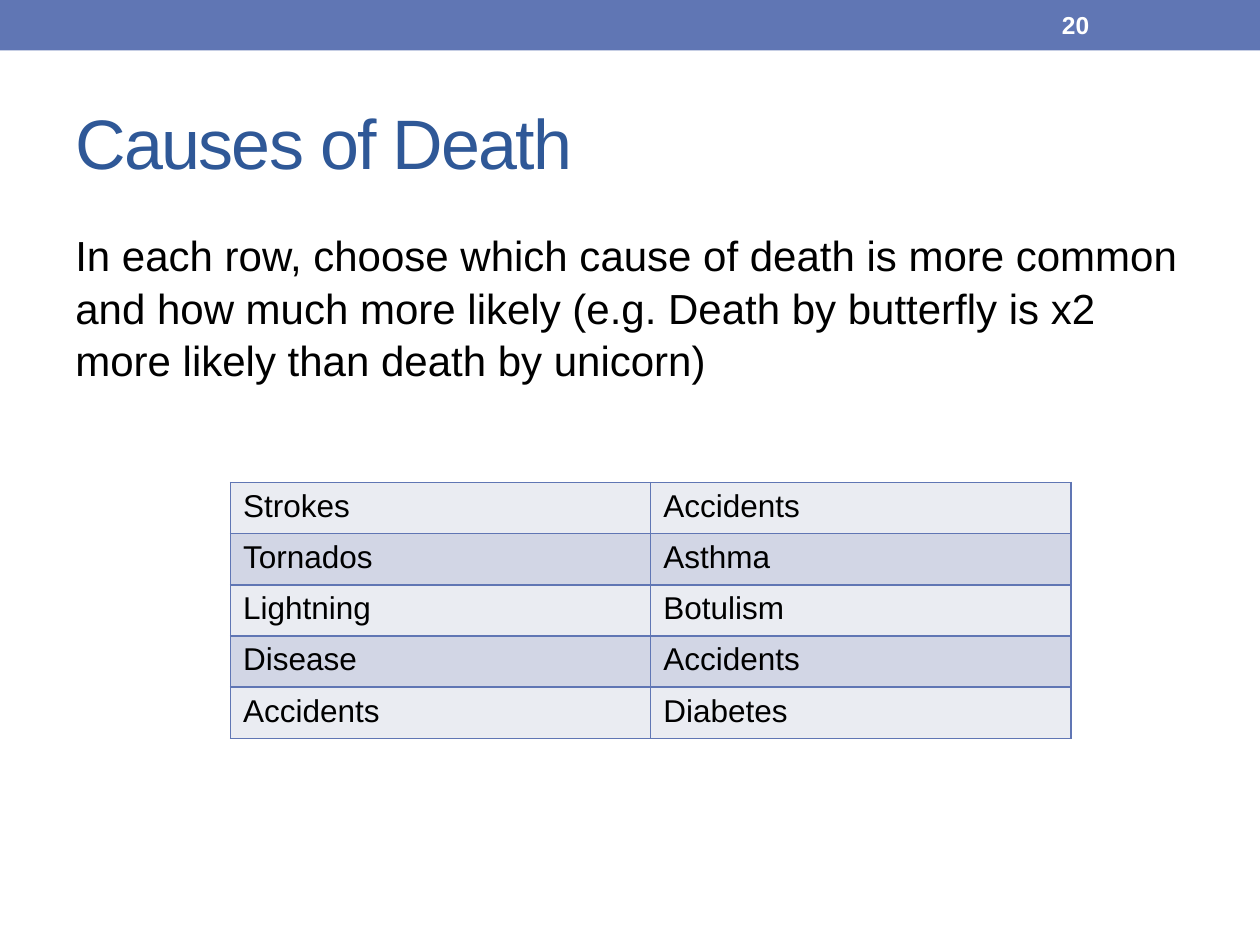
from dataclasses import dataclass

from lxml.etree import SubElement
from pptx import Presentation
from pptx.dml.color import RGBColor
from pptx.enum.shapes import MSO_SHAPE
from pptx.enum.text import MSO_ANCHOR, PP_ALIGN
from pptx.oxml.ns import qn
from pptx.util import Inches, Pt


@dataclass(frozen=True)
class Theme:
    font: str = "Arial"
    accent: str = "6076B4"
    title: str = "2F5897"
    ink: str = "000000"
    paper: str = "FFFFFF"
    bands: tuple = ("EAECF2", "D2D6E5")
    title_size: int = 40
    body_size: int = 24
    cell_size: int = 18
    number_size: int = 14


THEME = Theme()
PROMPT = (
    "In each row, choose which cause of death is more common and how much "
    "more likely (e.g. Death by butterfly is x2 more likely than death by unicorn)"
)
CAUSES = [
    ("Strokes", "Accidents"),
    ("Tornados", "Asthma"),
    ("Lightning", "Botulism"),
    ("Disease", "Accidents"),
    ("Accidents", "Diabetes"),
]


def paint(item, color):
    item.fill.solid()
    item.fill.fore_color.rgb = RGBColor.from_string(color)


def place(shape, left, top, width, height):
    shape.left, shape.top = Inches(left), Inches(top)
    shape.width, shape.height = Inches(width), Inches(height)


def write(frame, text, size, color=THEME.ink, bold=False,
          anchor=MSO_ANCHOR.TOP, spacing=None, track=None):
    """Fill a text frame; track is the letter spacing in points."""
    frame.word_wrap = True
    frame.vertical_anchor = anchor
    para = frame.paragraphs[0]
    para.alignment = PP_ALIGN.LEFT
    para.line_spacing = spacing
    run = para.add_run()
    run.text = text
    font = run.font
    font.name, font.size, font.bold = THEME.font, Pt(size), bold
    font.color.rgb = RGBColor.from_string(color)
    if track is not None:
        run._r.get_or_add_rPr().set("spc", str(round(track * 100)))


def add_bar(slide, width, height):
    bar = slide.shapes.add_shape(MSO_SHAPE.RECTANGLE, 0, 0, width, Inches(height))
    bar.shadow.inherit = False
    paint(bar, THEME.accent)
    bar.line.fill.background()


def add_title(slide, text, box):
    title = slide.shapes.title
    place(title, *box)
    write(title.text_frame, text, THEME.title_size, color=THEME.title,
          anchor=MSO_ANCHOR.MIDDLE, track=-1)


def add_text(slide, text, box, size, **style):
    label = slide.shapes.add_textbox(*map(Inches, box))
    write(label.text_frame, text, size, **style)


def add_borders(cell, color, width):
    props = cell._tc.get_or_add_tcPr()
    for side in ("a:lnL", "a:lnR", "a:lnT", "a:lnB"):
        line = SubElement(props, qn(side), w=str(Pt(width)))
        fill = SubElement(line, qn("a:solidFill"))
        SubElement(fill, qn("a:srgbClr"), val=color)


def add_grid(slide, rows, box):
    table = slide.shapes.add_table(
        len(rows), len(rows[0]), *map(Inches, box)).table
    table.first_row = False
    for i, row in enumerate(rows):
        for j, text in enumerate(row):
            cell = table.cell(i, j)
            write(cell.text_frame, text, THEME.cell_size)
            add_borders(cell, THEME.accent, 1)
            paint(cell, THEME.bands[i % 2])


def main():
    deck = Presentation()
    deck.slide_width, deck.slide_height = Inches(10), Inches(7.5)
    slide = deck.slides.add_slide(deck.slide_layouts[5])
    paint(slide.background, THEME.paper)
    add_bar(slide, deck.slide_width, 0.4)
    add_title(slide, "Causes of Death", (0.5, 0.58, 9, 1.08))
    add_text(slide, "20", (8.33, 0.02, 1.17, 0.36), THEME.number_size,
             color=THEME.paper, bold=True, anchor=MSO_ANCHOR.MIDDLE)
    add_grid(slide, CAUSES, (1.83, 3.83, 6.67, 2.03))
    add_text(slide, PROMPT, (0.5, 1.75, 9, 5.33), THEME.body_size, spacing=1.05)
    deck.save("out.pptx")


if __name__ == "__main__":
    main()
